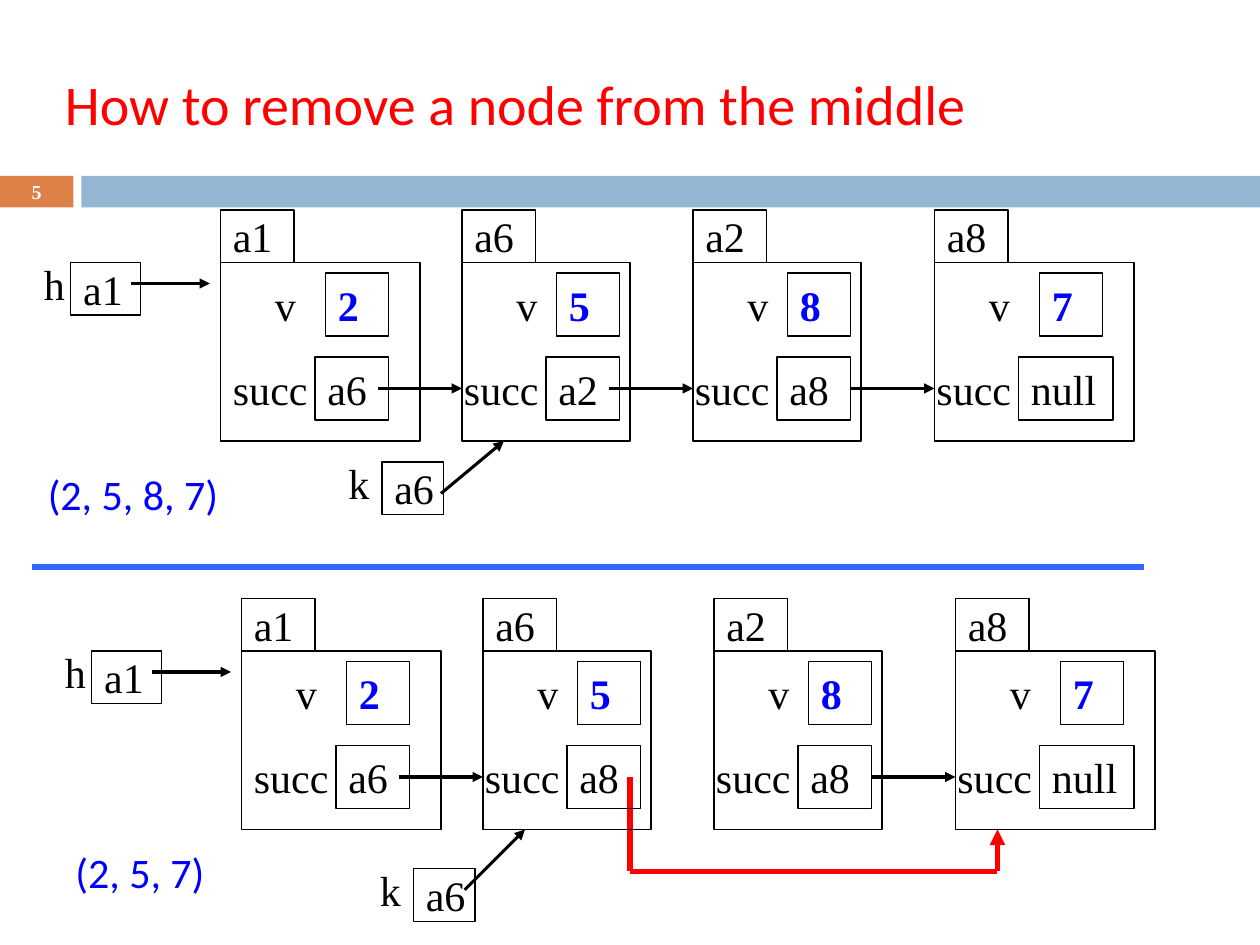
from dataclasses import dataclass

from lxml.etree import SubElement
from pptx import Presentation
from pptx.dml.color import RGBColor
from pptx.enum.shapes import MSO_CONNECTOR, MSO_SHAPE
from pptx.enum.text import MSO_ANCHOR, PP_ALIGN
from pptx.oxml.ns import qn
from pptx.util import Emu, Pt

EMU_PER_PX = 9525  # 96 px to the inch


@dataclass(frozen=True)
class Theme:
    black: str = "000000"
    white: str = "FFFFFF"
    red: str = "FF0000"
    blue: str = "0000FF"
    divider: str = "3366FF"
    orange: str = "DD8047"
    pale_blue: str = "94B6D2"
    serif: str = "Times New Roman"
    sans: str = "Calibri"
    title_size: float = 32
    body_size: float = 24
    number_size: float = 11.4
    outline: float = 0.75
    arrow: float = 1.75
    bypass: float = 3
    rule: float = 3.75


def px(length):
    return Emu(length * EMU_PER_PX)


def color(code):
    return RGBColor.from_string(code)


class ListSlide:
    def __init__(self, page, theme):
        self.page = page
        self.theme = theme

    def set_text(self, shape, words, ink=None, font=None, size=None, bold=False,
                 align=PP_ALIGN.LEFT, anchor=MSO_ANCHOR.TOP, wrap=True):
        frame = shape.text_frame
        frame.word_wrap = wrap
        frame.vertical_anchor = anchor
        para = frame.paragraphs[0]
        para.text = words
        para.alignment = align
        para.font.name = font or self.theme.serif
        para.font.size = Pt(size or self.theme.body_size)
        para.font.bold = bold
        para.font.color.rgb = color(ink or self.theme.black)

    def text(self, words, left, top, width, height, **style):
        box = self.page.shapes.add_textbox(px(left), px(top), px(width), px(height))
        self.set_text(box, words, **style)

    def rectangle(self, left, top, width, height):
        shape = self.page.shapes.add_shape(
            MSO_SHAPE.RECTANGLE, px(left), px(top), px(width), px(height))
        shape.shadow.inherit = False
        return shape

    def bar(self, left, top, width, height, fill):
        shape = self.rectangle(left, top, width, height)
        shape.fill.solid()
        shape.fill.fore_color.rgb = color(fill)
        shape.line.fill.background()

    def cell(self, words, left, top, width, height, **style):
        """Draw an outlined, unfilled box; words may be empty."""
        shape = self.rectangle(left, top, width, height)
        shape.fill.background()
        shape.line.color.rgb = color(self.theme.black)
        shape.line.width = Pt(self.theme.outline)
        if words:
            self.set_text(shape, words, **style)

    def line(self, start, end, ink=None, weight=None, arrow=True):
        connector = self.page.shapes.add_connector(
            MSO_CONNECTOR.STRAIGHT, *map(px, start + end))
        connector.line.color.rgb = color(ink or self.theme.black)
        connector.line.width = Pt(weight or self.theme.arrow)
        properties = connector._element.spPr
        if arrow:
            SubElement(properties.find(qn("a:ln")), qn("a:tailEnd"), type="triangle")
        SubElement(properties, qn("a:effectLst"))

    def address(self, words, left, top, width):
        self.cell(words, left, top, width, 40, anchor=MSO_ANCHOR.MIDDLE, wrap=False)

    def pointer(self, name, target, left, top, gap, width, start, end):
        """Draw a variable with the address it holds and its arrow."""
        self.text(name, left, top, gap + 4, 48, wrap=False)
        self.address(target, left + gap, top + 8, width)
        self.line(start, end)

    def node(self, place, value, succ, left, top, width, value_left, label_left, succ_width):
        self.cell(value, left + value_left, top + 48, 48, 48,
                  ink=self.theme.blue, bold=True)
        self.address(place, left, top, 56)
        self.cell(succ, left + label_left + 72, top + 112, succ_width, 48)
        self.text("v", left + 32, top + 48, 40, 48)
        self.text("succ", left + label_left, top + 112, 80, 48)
        self.cell("", left, top + 40, width, 136)

    def linked_list(self, left, top, successors, linked):
        """Draw h and four nodes; linked numbers the nodes reached by a plain arrow."""
        self.pointer("h", "a1", left, top + 32, 30, 53,
                     (left + 76, top + 56), (left + 136, top + 56))
        # address, value, offset from h, width, value offset, label offset, succ width
        nodes = [
            ("a1", "2", 144, 152, 80, 0, 56),
            ("a6", "5", 328, 128, 72, -8, 56),
            ("a2", "8", 504, 128, 72, -8, 56),
            ("a8", "7", 688, 152, 80, -8, 72),
        ]
        for index, (place, value, offset, *sizes) in enumerate(nodes):
            node_left = left + offset
            self.node(place, value, successors[index], node_left, top, *sizes)
            if index in linked:
                self.line((node_left - 64, top + 136), (node_left, top + 136))


def main():
    theme = Theme()
    deck = Presentation()
    deck.slide_width, deck.slide_height = px(960), px(720)
    slide = ListSlide(deck.slides.add_slide(deck.slide_layouts[6]), theme)

    slide.bar(0, 134, 56, 24, theme.orange)
    slide.bar(62, 134, 898, 24, theme.pale_blue)
    slide.text("5", 0, 133, 56, 26, ink=theme.white, size=theme.number_size,
               bold=True, align=PP_ALIGN.CENTER, anchor=MSO_ANCHOR.MIDDLE)
    slide.text("How to remove a node from the middle", 40, 48, 896, 61,
               ink=theme.red, font=theme.sans, size=theme.title_size)

    # Before the removal
    slide.linked_list(24, 160, ["a6", "a2", "a8", "null"], linked={1, 2, 3})
    slide.pointer("k", "a6", 256, 344, 35, 47, (336, 376), (384, 336))
    slide.text("(2, 5, 8, 7)", 27, 352, 156, 48,
               ink=theme.blue, font=theme.sans, wrap=False)

    slide.line((24, 432), (872, 432), theme.divider, theme.rule, arrow=False)

    # After the removal: a6 bypasses a2
    bypass = [(480, 592), (480, 664), (760, 664), (760, 632)]
    for start, end in zip(bypass, bypass[1:]):
        slide.line(start, end, theme.red, theme.bypass, arrow=end == bypass[-1])
    slide.linked_list(40, 456, ["a6", "a8", "a8", "null"], linked={1, 3})
    slide.pointer("k", "a6", 280, 654, 35, 47, (354, 678), (400, 632))
    slide.text("(2, 5, 7)", 48, 640, 122, 48,
               ink=theme.blue, font=theme.sans, wrap=False)

    deck.save("out.pptx")


if __name__ == "__main__":
    main()
